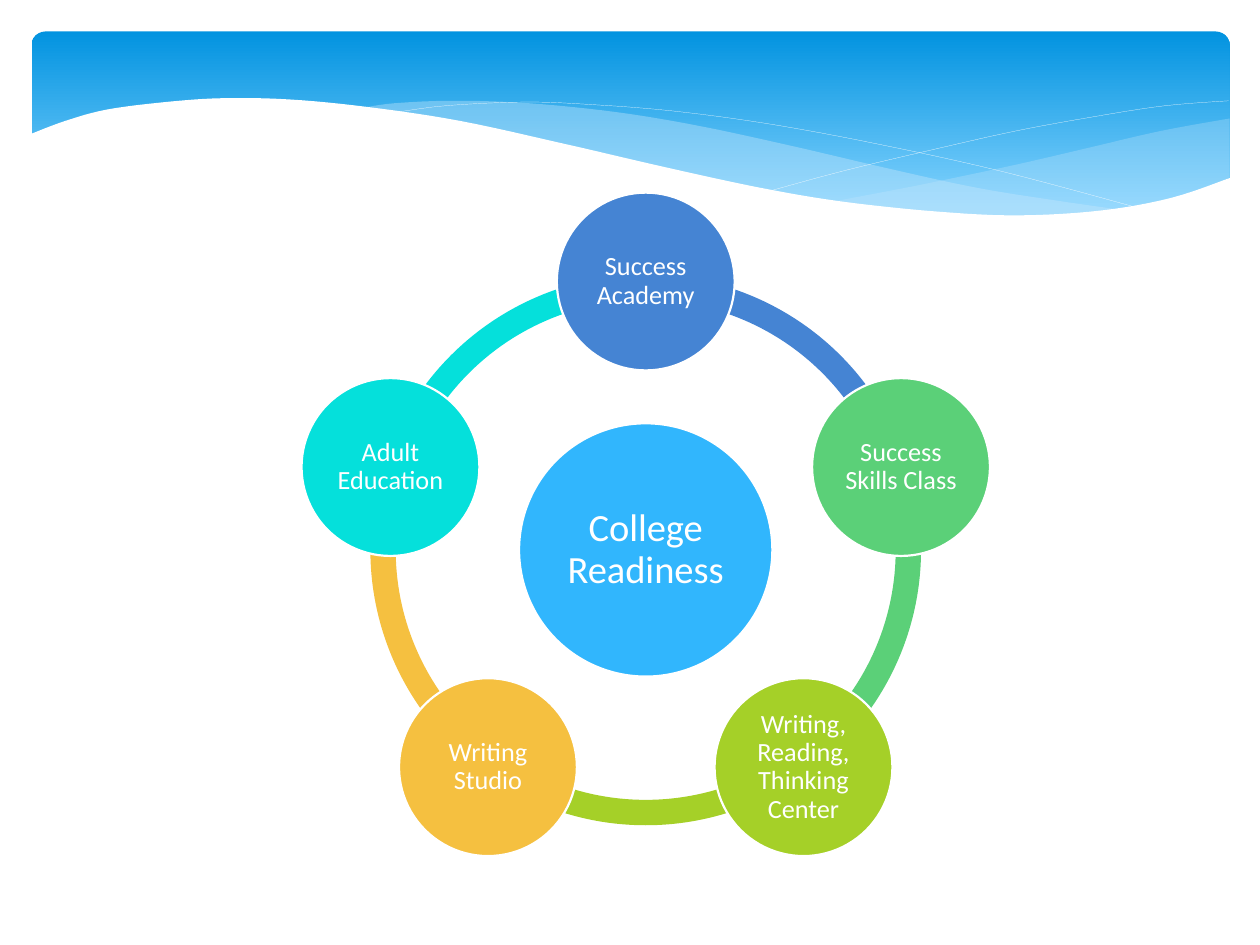
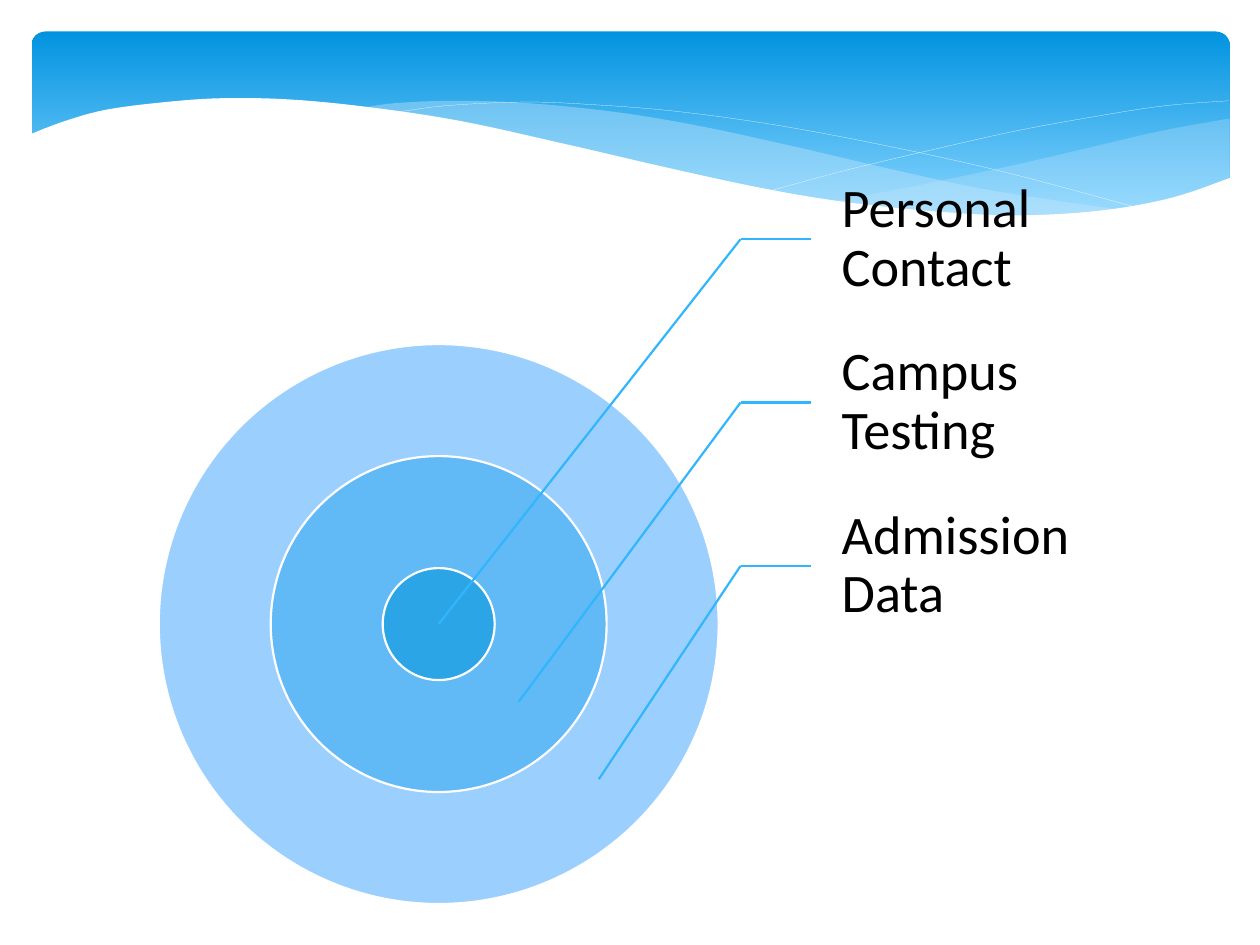
from math import cos, radians, sin

from lxml import etree
from pptx import Presentation
from pptx.dml.color import RGBColor
from pptx.enum.shapes import MSO_CONNECTOR, MSO_SHAPE
from pptx.enum.text import MSO_ANCHOR, PP_ALIGN
from pptx.oxml.ns import qn
from pptx.util import Inches, Pt

OVAL, ARC, ROUND = MSO_SHAPE.OVAL, MSO_SHAPE.BLOCK_ARC, MSO_SHAPE.ROUNDED_RECTANGLE
STRAIGHT = MSO_CONNECTOR.STRAIGHT
MIDDLE = MSO_ANCHOR.MIDDLE
LEFT, CENTER = PP_ALIGN.LEFT, PP_ALIGN.CENTER

WIDE, HIGH = 10, 7.5
FONT = "Calibri"
COLORS = {
    "white": "FFFFFF", "black": "000000", "sky": "31B6FD",
    "top": "0293E0", "fade": "83D3FE", "mist": "C6E7FC",
    "blue": "4584D3", "green": "5BD078", "lime": "A5D028",
    "gold": "F5C040", "aqua": "05E0DB",
    "outer": "9BD0FE", "middle": "61B9F5", "inner": "2CA5E6",
}

# Knots of the wave curves, in inches on the slide
RIGHT_TOP = [(9.76, .94), (9.21, 1.04), (8.61, 1.18), (8.05, 1.31), (7.29, 1.47),
             (6.61, 1.6)]
RIGHT_LOW = [(6.61, 1.6), (7.05, 1.65), (7.57, 1.7), (8.14, 1.72), (8.63, 1.7),
             (9.05, 1.63), (9.42, 1.54), (9.76, 1.41)]
LEFT_TOP = [(8.93, 1.67), (8.37, 1.59), (7.75, 1.49), (7.06, 1.34), (6.29, 1.16),
            (5.55, 1), (4.89, .89), (4.2, .82), (3.61, .8), (3.13, .82), (2.86, .86)]
LEFT_LOW = [(2.86, .86), (3.42, .94), (4.04, 1.06), (4.91, 1.26), (5.66, 1.43),
            (6.34, 1.56), (7.09, 1.66), (7.73, 1.72), (8.28, 1.73), (8.93, 1.67)]
FALL = [(3.09, .9), (3.53, .84), (4.16, .81), (4.69, .83), (5.33, .88), (6.08, .98),
        (6.95, 1.14), (7.95, 1.36), (9.07, 1.66)]
RISE = [(6.13, 1.51), (6.72, 1.35), (7.48, 1.17), (8.06, 1.04), (8.66, .93),
        (9.24, .84), (9.75, .8)]
EDGE = [(9.77, 1.41), (9.3, 1.57), (8.75, 1.67), (8.09, 1.71), (7.44, 1.68),
        (6.68, 1.6), (6.03, 1.49), (5.29, 1.33), (4.47, 1.14), (3.65, .96),
        (2.92, .85), (2.3, .79), (1.77, .78), (1.32, .81), (.85, .87), (.52, .96),
        (.23, 1.07)]

NODES = [("Success Academy", "blue"), ("Success Skills Class", "green"),
         ("Writing, Reading, Thinking Center", "lime"),
         ("Writing Studio", "gold"), ("Adult Education", "aqua")]
LABELS = ["Personal Contact", "Campus Testing", "Admission Data"]
DISCS = [(1, "outer"), (.6, "middle"), (.2, "inner")]


def rgb(name):
    return RGBColor.from_string(COLORS[name])


def style(shape, fill=None, line=None, width=1.25):
    shape.shadow.inherit = False
    if fill:
        shape.fill.solid()
        shape.fill.fore_color.rgb = rgb(fill)
    else:
        shape.fill.background()
    if line:
        shape.line.color.rgb = rgb(line)
        shape.line.width = Pt(width)
    else:
        shape.line.fill.background()
    return shape


def write(shape, text, size, color, align, inset, left=None):
    frame = shape.text_frame
    frame.word_wrap = True
    frame.vertical_anchor = MIDDLE
    frame.margin_top = frame.margin_right = frame.margin_bottom = Inches(inset)
    frame.margin_left = Inches(inset if left is None else left)
    frame.text = text
    para = frame.paragraphs[0]
    para.alignment, para.line_spacing = align, .9
    font = para.runs[0].font
    font.name, font.size, font.color.rgb = FONT, Pt(size), rgb(color)


def disc(slide, x, y, size, fill, line="white", kind=OVAL):
    """Add a round shape centred on (x, y)."""
    box = [Inches(v) for v in (x - size / 2, y - size / 2, size, size)]
    return style(slide.shapes.add_shape(kind, *box), fill, line)


def stroke(slide, start, end):
    line = slide.shapes.add_connector(STRAIGHT, *[Inches(v) for v in (*start, *end)])
    line.line.color.rgb = rgb("sky")
    line.line.width = Pt(1.25)
    etree.SubElement(line.element.spPr, qn("a:effectLst"))


def curve(knots, steps=6):
    """Return points of a Catmull-Rom spline through the knots."""
    ends = [knots[0], *knots, knots[-1]]
    points = [knots[0]]
    for a, b, c, d in zip(ends, ends[1:], ends[2:], ends[3:]):
        for t in (n / steps for n in range(1, steps + 1)):
            points.append(tuple(
                .5 * (2 * q + (r - p) * t + (2 * p - 5 * q + 4 * r - s) * t ** 2
                      + (3 * q - p - 3 * r + s) * t ** 3)
                for p, q, r, s in zip(a, b, c, d)))
    return points


def wave(slide, points, fill=None, line=None, alpha=None):
    points = [(Inches(x), Inches(y)) for x, y in points]
    pen = slide.shapes.build_freeform(*points[0])
    pen.add_line_segments(points[1:], close=fill is not None)
    shape = style(pen.convert_to_shape(), fill, line, .1)
    if alpha:
        color = shape.element.spPr.find(qn("a:solidFill"))[0]
        etree.SubElement(color, qn("a:alpha"), val=str(alpha * 1000))


def band(slide, box):
    """Draw the wave band and move it to the slide's layout, which shares it."""
    back = style(slide.shapes.add_shape(ROUND, *[Inches(v) for v in box]))
    back.adjustments[0] = .071
    back.fill.gradient()
    back.fill.gradient_angle = 270
    for stop, (place, color) in zip(back.fill.gradient_stops,
                                    [(0, "top"), (.9, "fade")]):
        stop.position, stop.color.rgb = place, rgb(color)
    wave(slide, curve(RIGHT_TOP) + curve(RIGHT_LOW), "mist", alpha=29)
    wave(slide, curve(LEFT_TOP) + curve(LEFT_LOW), "mist", alpha=40)
    for knots in (FALL, RISE):
        wave(slide, curve(knots), line="white")
    wave(slide, curve(EDGE) + [(.23, 2.24), (9.77, 2.24)], "white")
    for shape in list(slide.shapes):
        slide.slide_layout.shapes.element.append(shape.element)


def wheel(slide, x, y, size):
    """Draw the hub and its nodes on a ring with the given centre and width."""
    turn = 360 / len(NODES)
    for i, (_, color) in enumerate(NODES):
        arc = disc(slide, x, y, size, color, None, ARC)
        for n, angle in enumerate((270 + i * turn, 270 + (i + 1) * turn)):
            arc.adjustments[n] = angle % 360 * .6
        arc.adjustments[2] = .046
    hub = disc(slide, x, y, .46 * size, "sky")
    write(hub, "College Readiness", 22, "white", CENTER, .03)
    reach = .4875 * size
    for i, (text, color) in enumerate(NODES):
        angle = radians(270 + i * turn)
        node = disc(slide, x + reach * cos(angle), y + reach * sin(angle),
                    .323 * size, color)
        write(node, text, 15, "white", CENTER, .02)


def target(slide, x, y, w, h):
    """Draw nested discs at lower left and their labels at upper right."""
    size, row = .75 * h, .2188 * h
    mid_x, mid_y = x + size / 2, y + h - size / 2
    for share, color in DISCS:
        disc(slide, mid_x, mid_y, share * size, color)
    for i, text in enumerate(LABELS):
        top = y + i * row
        edge, bend = (x + .7 * w, top + row / 2), (x + .624 * w, top + row / 2)
        label = slide.shapes.add_textbox(
            *[Inches(v) for v in (edge[0], top, .3 * w, row)])
        write(label, text, 31, "black", LEFT, .04, .24)
        stroke(slide, bend, edge)
        stroke(slide, bend, (mid_x + i * .143 * size, mid_y + i * .1385 * size))


def main():
    deck = Presentation()
    deck.slide_width, deck.slide_height = Inches(WIDE), Inches(HIGH)
    blank = deck.slide_layouts[6]
    ready, entry = [deck.slides.add_slide(blank) for _ in range(2)]
    band(ready, (.25, .25, 9.51, 1.56))
    wheel(ready, .5125 * WIDE, .582 * HIGH, .437 * WIDE)
    target(entry, .126 * WIDE, HIGH / 6, .74 * WIDE, .79 * HIGH)
    deck.save("out.pptx")


if __name__ == "__main__":
    main()
